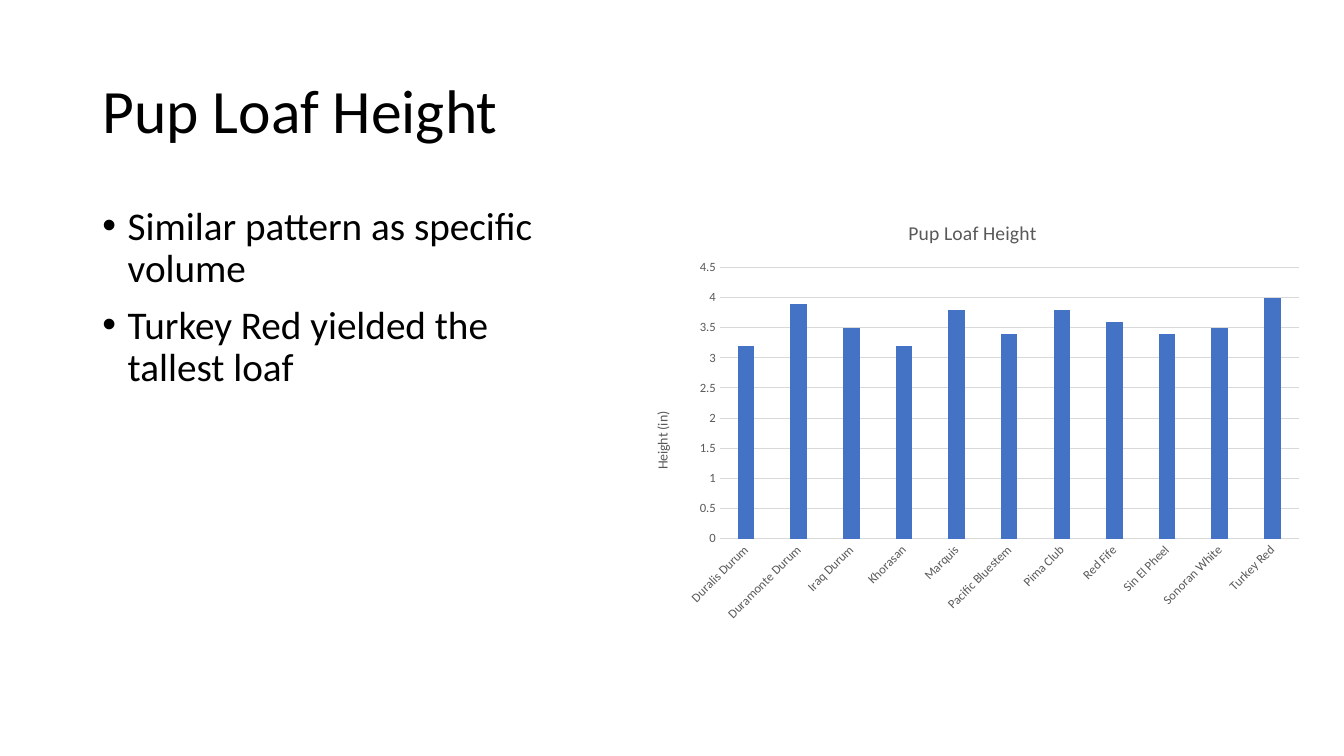
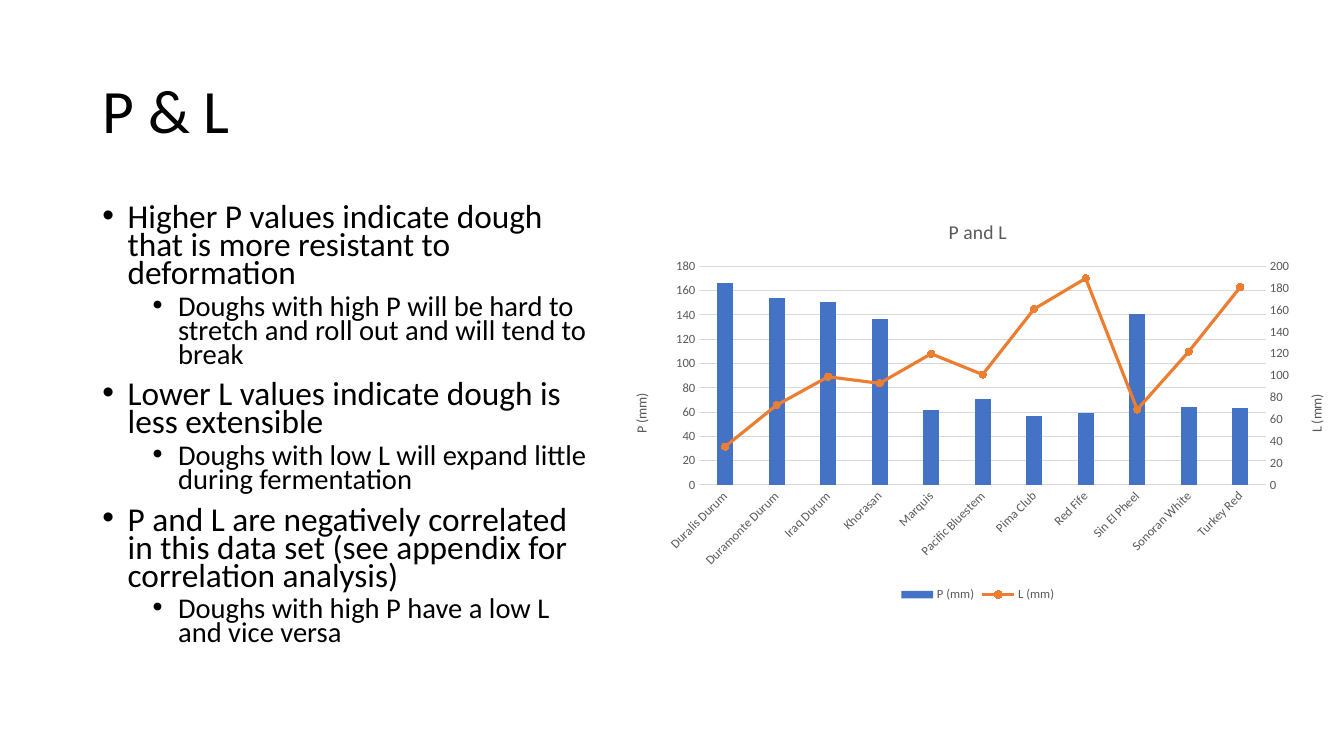
from copy import deepcopy
from dataclasses import dataclass

from pptx import Presentation
from pptx.chart.axis import ValueAxis
from pptx.chart.data import CategoryChartData
from pptx.dml.color import RGBColor
from pptx.enum.chart import (XL_CHART_TYPE, XL_LEGEND_POSITION,
                             XL_MARKER_STYLE, XL_TICK_MARK)
from pptx.enum.text import MSO_ANCHOR
from pptx.oxml import parse_xml
from pptx.oxml.ns import nsdecls, qn
from pptx.util import Cm, Pt

COLUMNS = XL_CHART_TYPE.COLUMN_CLUSTERED
LEGEND_BOTTOM = XL_LEGEND_POSITION.BOTTOM
CIRCLE = XL_MARKER_STYLE.CIRCLE
NO_TICKS = XL_TICK_MARK.NONE
MIDDLE = MSO_ANCHOR.MIDDLE


@dataclass(frozen=True)
class Theme:
    font: str = "Calibri"
    text: RGBColor = RGBColor(0x00, 0x00, 0x00)
    muted: RGBColor = RGBColor(0x59, 0x59, 0x59)
    grid: RGBColor = RGBColor(0xD9, 0xD9, 0xD9)
    column: RGBColor = RGBColor(0x44, 0x72, 0xC4)
    line: RGBColor = RGBColor(0xED, 0x7D, 0x31)
    title_size: float = 44
    chart_title_size: float = 14
    axis_title_size: float = 10
    label_size: float = 9


THEME = Theme()
LEFT, CONTENT_TOP = 2.33, 5.08
INDENT, LEVEL_STEP = Cm(0.64), Cm(1.27)

WHEATS = ["Duralis Durum", "Duramonte Durum", "Iraq Durum", "Khorasan",
          "Marquis", "Pacific Bluestem", "Pima Club", "Red Fife",
          "Sin El Pheel", "Sonoran White", "Turkey Red"]
HEIGHTS = [3.2, 3.9, 3.5, 3.2, 3.8, 3.4, 3.8, 3.6, 3.4, 3.5, 4]
P_VALUES = [166, 154, 151, 137, 62, 71, 57, 59, 141, 64, 63]
L_VALUES = [35, 73, 99, 93, 120, 101, 161, 189, 69, 122, 181]

# Bullets as (level, text)
HEIGHT_POINTS = [
    (0, "Similar pattern as specific volume"),
    (0, "Turkey Red yielded the tallest loaf"),
]
PL_POINTS = [
    (0, "Higher P values indicate dough that is more resistant to deformation"),
    (1, "Doughs with high P will be hard to stretch and roll out and will "
        "tend to break"),
    (0, "Lower L values indicate dough is less extensible"),
    (1, "Doughs with low L will expand little during fermentation"),
    (0, "P and L are negatively correlated in this data set (see appendix for "
        "correlation analysis)"),
    (1, "Doughs with high P have a low L and vice versa"),
]


# Text
def style_font(font, size, color):
    font.name = THEME.font
    font.size = Pt(size)
    font.bold = False
    font.color.rgb = color


def add_text_frame(slide, left, top, width, height):
    box = slide.shapes.add_textbox(Cm(left), Cm(top), Cm(width), Cm(height))
    box.text_frame.word_wrap = True
    return box.text_frame


def add_title(slide, title):
    frame = add_text_frame(slide, LEFT, 1.02, 29.21, 3.68)
    frame.vertical_anchor = MIDDLE
    frame.text = title
    heading = frame.paragraphs[0]
    heading.line_spacing = 0.9
    style_font(heading.runs[0].font, THEME.title_size, THEME.text)


def add_bullets(slide, points, width, height, sizes, line_spacing):
    frame = add_text_frame(slide, LEFT, CONTENT_TOP, width, height)
    frame.text = "\n".join(text for _, text in points)
    for paragraph, (level, _) in zip(frame.paragraphs, points):
        paragraph.level = level
        paragraph.line_spacing = line_spacing
        paragraph.space_before = Pt(5 if level else 10)
        style_font(paragraph.runs[0].font, sizes[level], THEME.text)
        properties = paragraph._p.get_or_add_pPr()
        properties.set("marL", str(INDENT + level * LEVEL_STEP))
        properties.set("indent", str(-INDENT))
        properties.append(parse_xml(
            f'<a:buFont {nsdecls("a")} typeface="Arial"/>'))
        properties.append(parse_xml(f'<a:buChar {nsdecls("a")} char="•"/>'))


# Chart parts
def style_chart_text(text_frame, text, size):
    text_frame.text = text
    style_font(text_frame.paragraphs[0].runs[0].font, size, THEME.muted)


def style_category_axis(axis):
    axis.major_tick_mark = NO_TICKS
    axis.format.line.color.rgb = THEME.grid
    axis.format.line.width = Pt(0.75)
    style_font(axis.tick_labels.font, THEME.label_size, THEME.muted)
    label_body = axis._element.find(qn("c:txPr")).find(qn("a:bodyPr"))
    label_body.set("rot", "-2700000")
    label_body.set("vert", "horz")


def style_value_axis(axis, title, maximum, step):
    axis.minimum_scale, axis.maximum_scale = 0, maximum
    axis.major_unit = step
    axis.major_tick_mark = NO_TICKS
    axis.format.line.fill.background()
    style_font(axis.tick_labels.font, THEME.label_size, THEME.muted)
    axis.tick_labels.number_format = "General"
    axis.tick_labels.number_format_is_linked = False
    title_frame = axis.axis_title.text_frame
    style_chart_text(title_frame, title, THEME.axis_title_size)
    title_body = title_frame._txBody.find(qn("a:bodyPr"))
    title_body.set("rot", "-5400000")
    title_body.set("vert", "horz")


def add_column_chart(slide, title, series, value_axis, left, width, height):
    data = CategoryChartData()
    data.categories = WHEATS
    for name, values in series:
        data.add_series(name, values)
    chart = slide.shapes.add_chart(COLUMNS, Cm(left), Cm(CONTENT_TOP),
                                   Cm(width), Cm(height), data).chart
    style_font(chart.font, THEME.axis_title_size, THEME.text)
    style_chart_text(chart.chart_title.text_frame, title,
                     THEME.chart_title_size)
    chart.has_legend = False
    columns = chart.plots[0]
    columns.vary_by_categories = False
    columns.gap_width, columns.overlap = 219, -27
    columns.series[0].format.fill.solid()
    columns.series[0].format.fill.fore_color.rgb = THEME.column
    style_category_axis(chart.category_axis)
    style_value_axis(chart.value_axis, *value_axis)
    gridlines = chart.value_axis.major_gridlines.format.line
    gridlines.color.rgb = THEME.grid
    gridlines.width = Pt(0.75)
    return chart


def set_child(parent, tag, value):
    """Set the value of a child element that may be written in any chart."""
    for child in parent.findall(qn(tag)):
        child.set("val", value)


def move_last_series_to_right_axis(chart, value_axis):
    """Draw the last series as a line against a second value axis."""
    category_id, value_id = "50010", "50020"
    plot_area = chart._chartSpace.chart.plotArea
    bars = plot_area.find(qn("c:barChart"))
    line_series = bars.findall(qn("c:ser"))[-1]
    for bar_only in line_series.findall(qn("c:invertIfNegative")):
        line_series.remove(bar_only)
    lines = parse_xml(
        f'<c:lineChart {nsdecls("c")}><c:grouping val="standard"/>'
        '<c:varyColors val="0"/><c:marker val="1"/>'
        f'<c:axId val="{category_id}"/><c:axId val="{value_id}"/>'
        '</c:lineChart>')
    lines.insert(2, line_series)
    bars.addnext(lines)

    # Second pair of axes: visible values on the right, hidden categories
    left_values = plot_area.find(qn("c:valAx"))
    right_values = deepcopy(left_values)
    hidden_categories = deepcopy(plot_area.find(qn("c:catAx")))
    left_values.addnext(right_values)
    right_values.addnext(hidden_categories)
    for axis, own_id, cross_id in (
            (right_values, value_id, category_id),
            (hidden_categories, category_id, value_id)):
        set_child(axis, "c:axId", own_id)
        set_child(axis, "c:crossAx", cross_id)
    set_child(right_values, "c:axPos", "r")
    set_child(right_values, "c:crosses", "max")
    set_child(hidden_categories, "c:delete", "1")
    right_axis = ValueAxis(right_values)
    right_axis.has_major_gridlines = False
    style_value_axis(right_axis, *value_axis)

    line = chart.plots[1].series[0]
    line.smooth = False
    line.format.line.color.rgb = THEME.line
    line.format.line.width = Pt(2.25)
    line.marker.style, line.marker.size = CIRCLE, 5
    line.marker.format.fill.solid()
    line.marker.format.fill.fore_color.rgb = THEME.line
    line.marker.format.line.color.rgb = THEME.line


def add_legend(chart):
    chart.has_legend = True
    chart.legend.position = LEGEND_BOTTOM
    chart.legend.include_in_layout = False
    style_font(chart.legend.font, THEME.label_size, THEME.muted)


# Slides
def add_slide(deck, title):
    slide = deck.slides.add_slide(deck.slide_layouts[6])
    add_title(slide, title)
    return slide


def add_height_slide(deck):
    slide = add_slide(deck, "Pup Loaf Height")
    add_bullets(slide, HEIGHT_POINTS, 12.73, 12.27, [28], 0.9)
    add_column_chart(slide, "Pup Loaf Height", [("Series 1", HEIGHTS)],
                     ("Height (in)", 4.5, 0.5), 15.95, 17.12, 10.8)


def add_pl_slide(deck):
    slide = add_slide(deck, "P & L")
    add_bullets(slide, PL_POINTS, 12.85, 12.09, [23.8, 20.4], 0.7)
    chart = add_column_chart(slide, "P and L",
                             [("P (mm)", P_VALUES), ("L (mm)", L_VALUES)],
                             ("P (mm)", 180, 20), 15.42, 18.44, 10.19)
    move_last_series_to_right_axis(chart, ("L (mm)", 200, 20))
    add_legend(chart)


def main():
    deck = Presentation()
    deck.slide_width, deck.slide_height = Cm(33.87), Cm(19.05)
    add_height_slide(deck)
    add_pl_slide(deck)
    deck.save("out.pptx")


if __name__ == "__main__":
    main()
